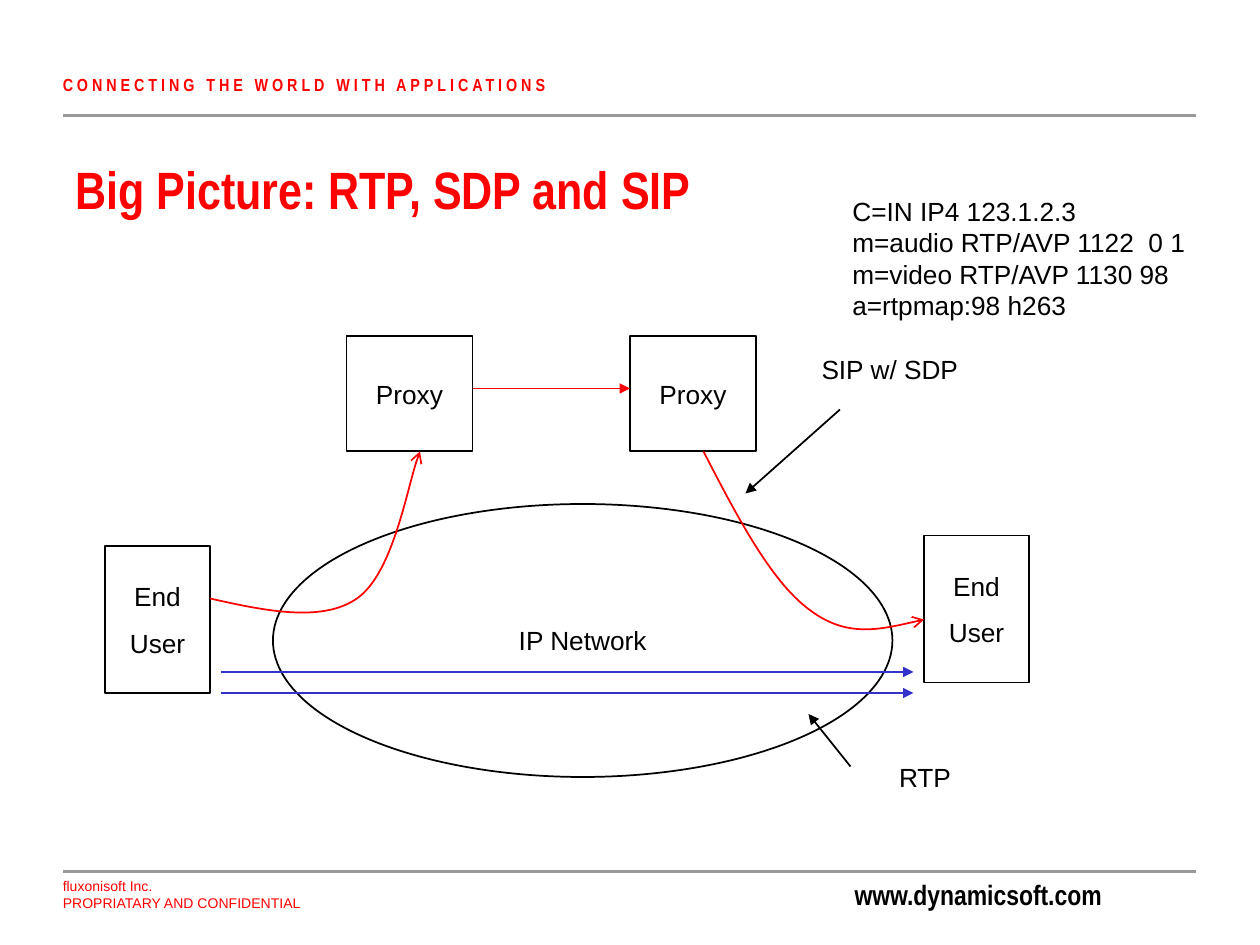
"""Build a slide on how RTP, SDP and SIP fit together."""
from lxml import etree
from pptx import Presentation
from pptx.dml.color import RGBColor
from pptx.enum.shapes import MSO_CONNECTOR, MSO_SHAPE
from pptx.enum.text import MSO_ANCHOR, MSO_AUTO_SIZE, PP_ALIGN
from pptx.oxml.ns import qn
from pptx.util import Inches, Pt

RED = RGBColor(0xFF, 0, 0)
BLACK = RGBColor(0, 0, 0)
GREY = RGBColor(0x99, 0x99, 0x99)
BLUE = RGBColor(0x33, 0x33, 0xCC)
RECT, OVAL = MSO_SHAPE.RECTANGLE, MSO_SHAPE.OVAL
LEFT, CENTER = PP_ALIGN.LEFT, PP_ALIGN.CENTER
TOP, MIDDLE = MSO_ANCHOR.TOP, MSO_ANCHOR.MIDDLE
STRAIGHT, NO_FIT = MSO_CONNECTOR.STRAIGHT, MSO_AUTO_SIZE.NONE

WIDE, HIGH = 10, 7.5
CELL = Inches(WIDE) / 120
FINE = 100

BODY = {"name": "Arial", "size": Pt(15), "bold": False}
SMALL = {"name": "Arial", "size": Pt(8), "bold": False}
HEAD = {"name": "Arial Narrow", "size": Pt(30), "bold": True}
TAG = {**HEAD, "size": Pt(10)}
SITE = {**HEAD, "size": Pt(16)}

TITLE = ("Big Picture: RTP, SDP and SIP", (6, 13, 108, 10))
SLOGAN = ("CONNECTING THE WORLD WITH APPLICATIONS", (4.8, 6.4, 67, 3.2))
OWNER = ("fluxonisoft Inc.\vPROPRIATARY AND CONFIDENTIAL", (4.8, 83, 67, 4.4))
WEB = ("www.dynamicsoft.com", (80.2, 83, 28, 4.4))
CODE = ("C=IN IP4 123.1.2.3\nm=audio RTP/AVP 1122  0 1\n"
        "m=video RTP/AVP 1130 98\na=rtpmap:98 h263", (80, 18, 34.6, 13.2))
LABELS = [
    ("SIP w/ SDP", (77, 33, 15.5, 4.2)),
    ("RTP", (84.4, 71.9, 7.4, 4.2)),
]
NODES = [
    (RECT, "End\nUser", (10, 52, 10, 14)),
    (RECT, "End\nUser", (88, 51, 10, 14)),
    (RECT, "Proxy", (33, 32, 12, 11)),
    (RECT, "Proxy", (60, 32, 12, 11)),
    (OVAL, "IP Network", (26, 48, 59, 26)),
]
RULES = [(6, 11, 113.9, 11), (6, 83, 113.9, 83)]
ARROWS = [
    (RED, (45, 37, 60, 37)),
    (BLACK, (80, 39, 71, 47)),
    (BLUE, (21, 64, 87, 64)),
    (BLUE, (21, 66, 87, 66)),
    (BLACK, (81, 73, 77, 68)),
]
CURVES = [
    [(20, 57), (25.3, 58.2), (30.7, 59.3), (34, 57),
     (37.3, 54.7), (39, 45.4), (40, 43)],
    [(67, 43), (70.2, 49.2), (73.4, 55.3), (77, 58),
     (80.5, 60.7), (84.2, 59.9), (88, 59)],
]


def place(cells):
    return [round(cell * CELL) for cell in cells]


def write(shape, text, font, color=BLACK, align=LEFT, gap=0, wrap=True,
          anchor=MIDDLE):
    frame = shape.text_frame
    frame.text = text
    look = {"word_wrap": wrap, "vertical_anchor": anchor, "auto_size": NO_FIT}
    for key, value in look.items():
        setattr(frame, key, value)
    for row, para in enumerate(frame.paragraphs):
        para.alignment = align
        para.space_before = Pt(gap if row else 0)
        for run in para.runs:
            for key, value in font.items():
                setattr(run.font, key, value)
            run.font.color.rgb = color


def add_text(slide, item, font, **look):
    text, box = item
    shape = slide.shapes.add_textbox(*place(box))
    write(shape, text, font, **look)
    return shape


def add_node(slide, kind, text, box):
    shape = slide.shapes.add_shape(kind, *place(box))
    shape.shadow.inherit = False
    shape.fill.background()
    stroke(shape, BLACK)
    write(shape, text, BODY, align=CENTER, gap=8.5, wrap=False)


def stroke(shape, color, width=1, tip=None):
    shape.line.color.rgb = color
    shape.line.width = Pt(width)
    if tip:
        line = shape._element.spPr.find(qn("a:ln"))
        etree.SubElement(line, qn("a:tailEnd"), type=tip)


def add_line(slide, ends, color, width=1, tip=None):
    line = slide.shapes.add_connector(STRAIGHT, *place(ends))
    stroke(line, color, width, tip)
    etree.SubElement(line._element.spPr, qn("a:effectLst"))


def add_curve(slide, points):
    first, *rest = [(x * FINE, y * FINE) for x, y in points]
    pen = slide.shapes.build_freeform(*first, scale=CELL / FINE)
    pen.add_line_segments(rest, close=False)
    shape = pen.convert_to_shape()
    steps = list(shape._element.iter(qn("a:lnTo")))
    for start in range(0, len(steps), 3):
        bend = etree.Element(qn("a:cubicBezTo"))
        steps[start].addprevious(bend)
        for step in steps[start:start + 3]:
            bend.append(step[0])
            step.getparent().remove(step)
    shape.shadow.inherit = False
    shape.fill.background()
    stroke(shape, RED, tip="arrow")


def main():
    deck = Presentation()
    deck.slide_width, deck.slide_height = Inches(WIDE), Inches(HIGH)
    slide = deck.slides.add_slide(deck.slide_layouts[5])

    text, box = TITLE
    title = slide.shapes.title
    title.left, title.top, title.width, title.height = place(box)
    write(title, text, HEAD, RED)

    add_text(slide, WEB, SITE, anchor=TOP)
    add_text(slide, OWNER, SMALL, color=RED)
    slogan = add_text(slide, SLOGAN, TAG, color=RED)
    for run in slogan.text_frame.paragraphs[0].runs:
        run.font._element.set("spc", "228")
    for ends in RULES:
        add_line(slide, ends, GREY, 2.25)

    for node in NODES:
        add_node(slide, *node)
    for points in CURVES:
        add_curve(slide, points)
    for color, ends in ARROWS:
        add_line(slide, ends, color, tip="triangle")
    add_text(slide, CODE, BODY, wrap=False)
    for item in LABELS:
        add_text(slide, item, BODY, align=CENTER, wrap=False)
    deck.save("out.pptx")


if __name__ == "__main__":
    main()
